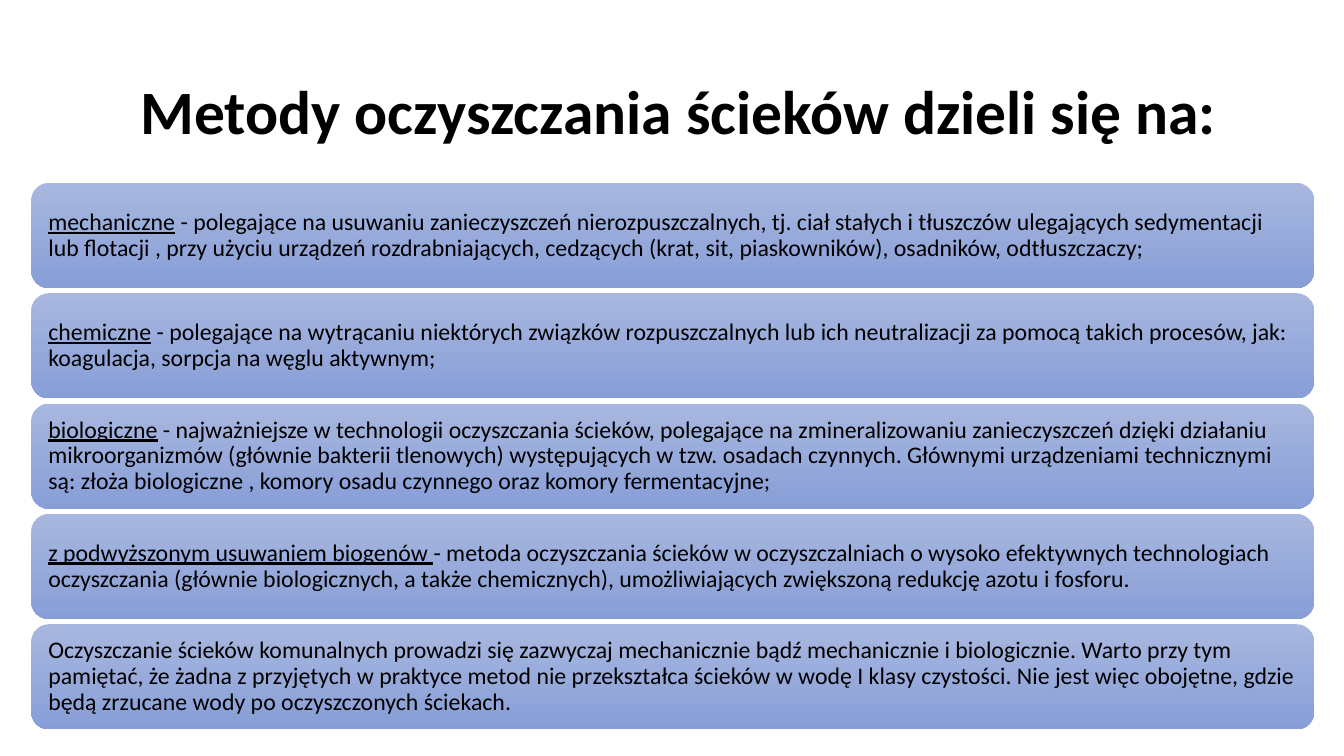
from pptx import Presentation
from pptx.dml.color import RGBColor
from pptx.enum.shapes import MSO_SHAPE
from pptx.enum.text import MSO_ANCHOR, MSO_AUTO_SIZE, PP_ALIGN
from pptx.util import Cm, Pt

ROUND = MSO_SHAPE.ROUNDED_RECTANGLE
TOP, MIDDLE = MSO_ANCHOR.TOP, MSO_ANCHOR.MIDDLE
LEFT = PP_ALIGN.LEFT
FIXED = MSO_AUTO_SIZE.NONE

# Content: underlined term, then the rest of the text
TITLE = "Metody oczyszczania ścieków dzieli się na:"
METHODS = [
    ("mechaniczne",
     " - polegające na usuwaniu zanieczyszczeń nierozpuszczalnych, tj. ciał "
     "stałych i tłuszczów ulegających sedymentacji lub flotacji , przy użyciu "
     "urządzeń rozdrabniających, cedzących (krat, sit, piaskowników), "
     "osadników, odtłuszczaczy;"),
    ("chemiczne",
     " - polegające na wytrącaniu niektórych związków rozpuszczalnych lub ich "
     "neutralizacji za pomocą takich procesów, jak: koagulacja, sorpcja na "
     "węglu aktywnym;"),
    ("biologiczne",
     " - najważniejsze w technologii oczyszczania ścieków, polegające na "
     "zmineralizowaniu zanieczyszczeń dzięki działaniu mikroorganizmów "
     "(głównie bakterii tlenowych) występujących w tzw. osadach czynnych. "
     "Głównymi urządzeniami technicznymi są: złoża biologiczne , komory osadu "
     "czynnego oraz komory fermentacyjne;"),
    ("z podwyższonym usuwaniem biogenów ",
     "- metoda oczyszczania ścieków w oczyszczalniach o wysoko efektywnych "
     "technologiach oczyszczania (głównie biologicznych, a także chemicznych), "
     "umożliwiających zwiększoną redukcję azotu i fosforu."),
    ("",
     "Oczyszczanie ścieków komunalnych prowadzi się zazwyczaj mechanicznie "
     "bądź mechanicznie i biologicznie. Warto przy tym pamiętać, że żadna z "
     "przyjętych w praktyce metod nie przekształca ścieków w wodę I klasy "
     "czystości. Nie jest więc obojętne, gdzie będą zrzucane wody po "
     "oczyszczonych ściekach."),
]

# Style and layout, lengths in cm
FONT = "Calibri"
BLACK = RGBColor(0x00, 0x00, 0x00)
LIGHT = RGBColor(0xA8, 0xB7, 0xDF)
DARK = RGBColor(0x88, 0x9E, 0xD7)
BAR_X, BAR_Y, BAR_W, BAR_H = 0.79, 4.61, 32.33, 2.65
STEP = 2.78
INSET = 0.3


def style(run, size, bold=False):
    font = run.font
    font.name, font.size, font.bold = FONT, Pt(size), bold
    font.color.rgb = BLACK


def add_bar(slide, row, term, rest):
    bar = slide.shapes.add_shape(
        ROUND, Cm(BAR_X), Cm(BAR_Y + row * STEP), Cm(BAR_W), Cm(BAR_H))
    bar.shadow.inherit = False
    bar.line.fill.background()
    bar.fill.gradient()
    bar.fill.gradient_angle = 270
    for stop, color in zip(bar.fill.gradient_stops, (LIGHT, DARK)):
        stop.color.rgb = color

    frame = bar.text_frame
    frame.word_wrap = True
    frame.vertical_anchor = MIDDLE
    frame.margin_left = frame.margin_right = Cm(INSET)
    frame.margin_top = frame.margin_bottom = Cm(INSET)
    para = frame.paragraphs[0]
    para.alignment = LEFT
    para.line_spacing = 0.9
    for text, under in ((term, True), (rest, False)):
        if text:
            run = para.add_run()
            run.text = text
            style(run, 17)
            run.font.underline = under


def main():
    deck = Presentation()
    deck.slide_width, deck.slide_height = Cm(33.87), Cm(19.05)
    slide = deck.slides.add_slide(deck.slide_layouts[5])

    # Title
    title = slide.shapes.title
    title.left, title.top = Cm(3.28), Cm(1.93)
    title.width, title.height = Cm(29.21), Cm(3.68)
    frame = title.text_frame
    frame.text = TITLE
    frame.word_wrap = True
    frame.auto_size = FIXED
    frame.vertical_anchor = TOP
    para = frame.paragraphs[0]
    para.alignment = LEFT
    para.line_spacing = 0.9
    style(para.runs[0], 44, bold=True)

    # Bars
    for row, (term, rest) in enumerate(METHODS):
        add_bar(slide, row, term, rest)

    deck.save("out.pptx")


if __name__ == "__main__":
    main()
